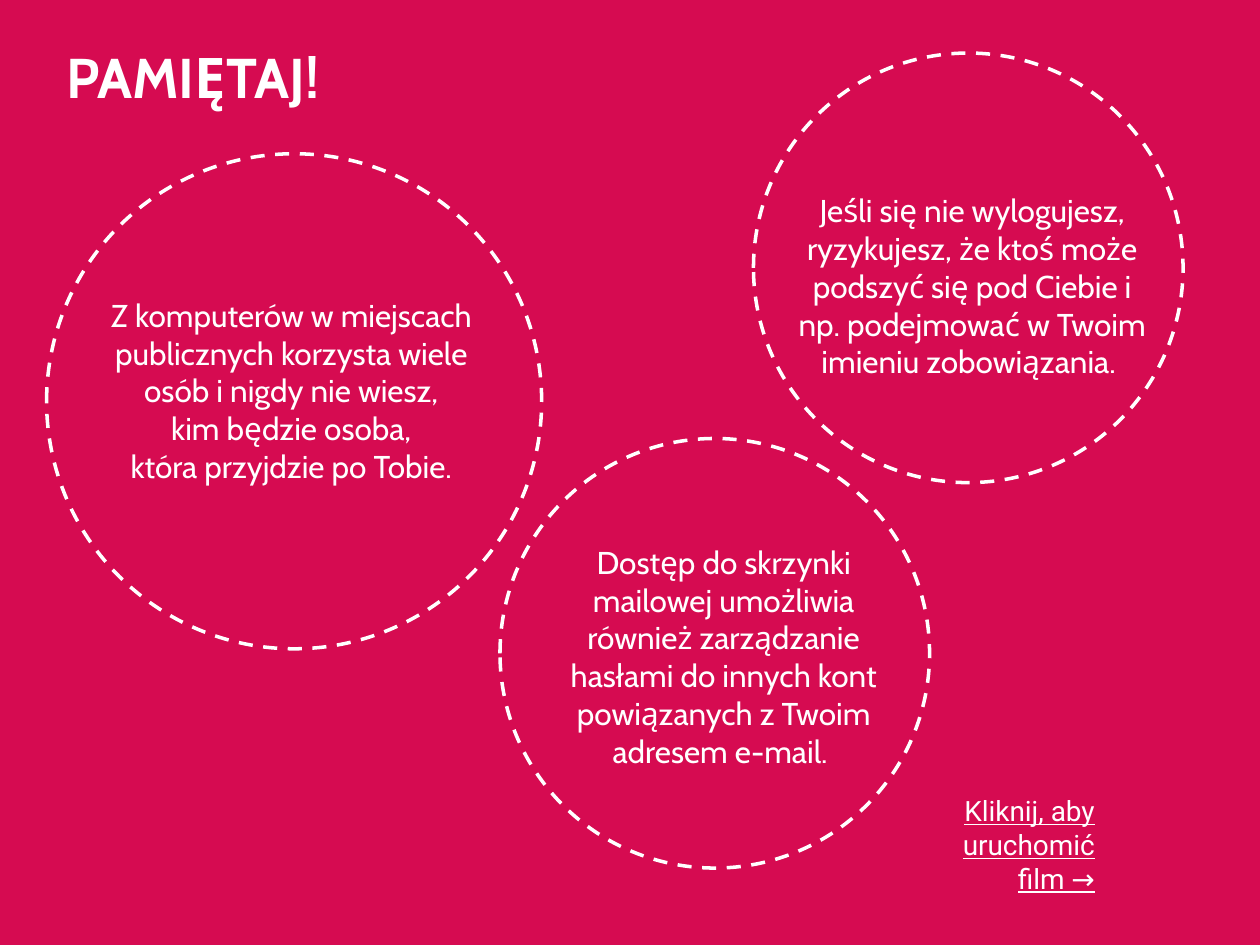
from dataclasses import dataclass
from typing import Any

from pptx import Presentation
from pptx.dml.color import RGBColor
from pptx.enum.dml import MSO_LINE
from pptx.enum.shapes import MSO_SHAPE
from pptx.enum.text import PP_ALIGN
from pptx.util import Cm, Pt

CRIMSON = "D60B51"
WHITE = "FFFFFF"


def colour(value):
    """Turn a hex string into a colour."""
    return RGBColor.from_string(value)


@dataclass
class Painter:
    """Hold the style and the current slide."""

    page: Any
    ink: str = WHITE
    font: str = "Cabin"
    size: int = 18
    stroke: int = 2

    def shape(self, kind, left, top, width, height, line):
        """Add an outlined shape without shadow."""
        shape = self.page.shapes.add_shape(kind, Cm(left), Cm(top), Cm(width), Cm(height))
        shape.shadow.inherit = False
        shape.line.color.rgb = colour(line)
        shape.line.width = Pt(self.stroke)
        return shape

    def backdrop(self, width, height, fill):
        """Cover the slide with one colour."""
        panel = self.shape(MSO_SHAPE.RECTANGLE, 0, 0, width, height, fill)
        panel.fill.solid()
        panel.fill.fore_color.rgb = colour(fill)

    def circle(self, left, top, diameter):
        """Add a dashed circle."""
        ring = self.shape(MSO_SHAPE.OVAL, left, top, diameter, diameter, self.ink)
        ring.fill.background()
        ring.line.dash_style = MSO_LINE.DASH

    def text(self, left, top, width, height, lines, align=PP_ALIGN.CENTER,
             size=None, font=None, bold=None, underline=None):
        """Add a wrapped text box with one paragraph per line."""
        box = self.page.shapes.add_textbox(Cm(left), Cm(top), Cm(width), Cm(height))
        frame = box.text_frame
        frame.word_wrap = True
        for index, line in enumerate(lines):
            para = frame.add_paragraph() if index else frame.paragraphs[0]
            para.alignment = align
            span = para.add_run()
            span.text = line
            span.font.name = font or self.font
            span.font.size = Pt(size or self.size)
            span.font.bold = bold
            span.font.underline = underline
            span.font.color.rgb = colour(self.ink)


def main():
    """Build the reminder slide."""
    deck = Presentation()
    deck.slide_width, deck.slide_height = Cm(25.4), Cm(19.05)
    painter = Painter(deck.slides.add_slide(deck.slide_layouts[6]))

    painter.backdrop(25.4, 19.05, CRIMSON)
    painter.text(1.09, 0.74, 7.87, 6.93, ["PAMIĘTAJ!"], PP_ALIGN.LEFT, size=32, bold=True)

    painter.circle(0.94, 3.1, 9.98)
    painter.text(0.08, 5.84, 11.73, 4.11, [
        "Z komputerów w miejscach ",
        "publicznych korzysta wiele ",
        "osób i nigdy nie wiesz, ",
        "kim będzie osoba, ",
        "która przyjdzie po Tobie. ",
    ])

    painter.circle(15.19, 1.07, 8.66)
    painter.text(15.7, 3.73, 7.8, 4.11, [
        "Jeśli się nie wylogujesz, ryzykujesz, że ktoś może podszyć się pod Ciebie i "
        "np. podejmować w Twoim imieniu zobowiązania. "
    ])

    painter.text(18.26, 15.88, 4.06, 2.31, ["Kliknij, aby uruchomić film →"],
                 PP_ALIGN.RIGHT, size=16, font="Roboto", underline=True)

    painter.circle(10.08, 8.84, 8.66)
    painter.text(10.69, 10.82, 7.8, 4.88, [
        "Dostęp do skrzynki mailowej umożliwia również zarządzanie hasłami do innych "
        "kont powiązanych z Twoim adresem e-mail. "
    ])

    deck.save("out.pptx")


if __name__ == "__main__":
    main()
